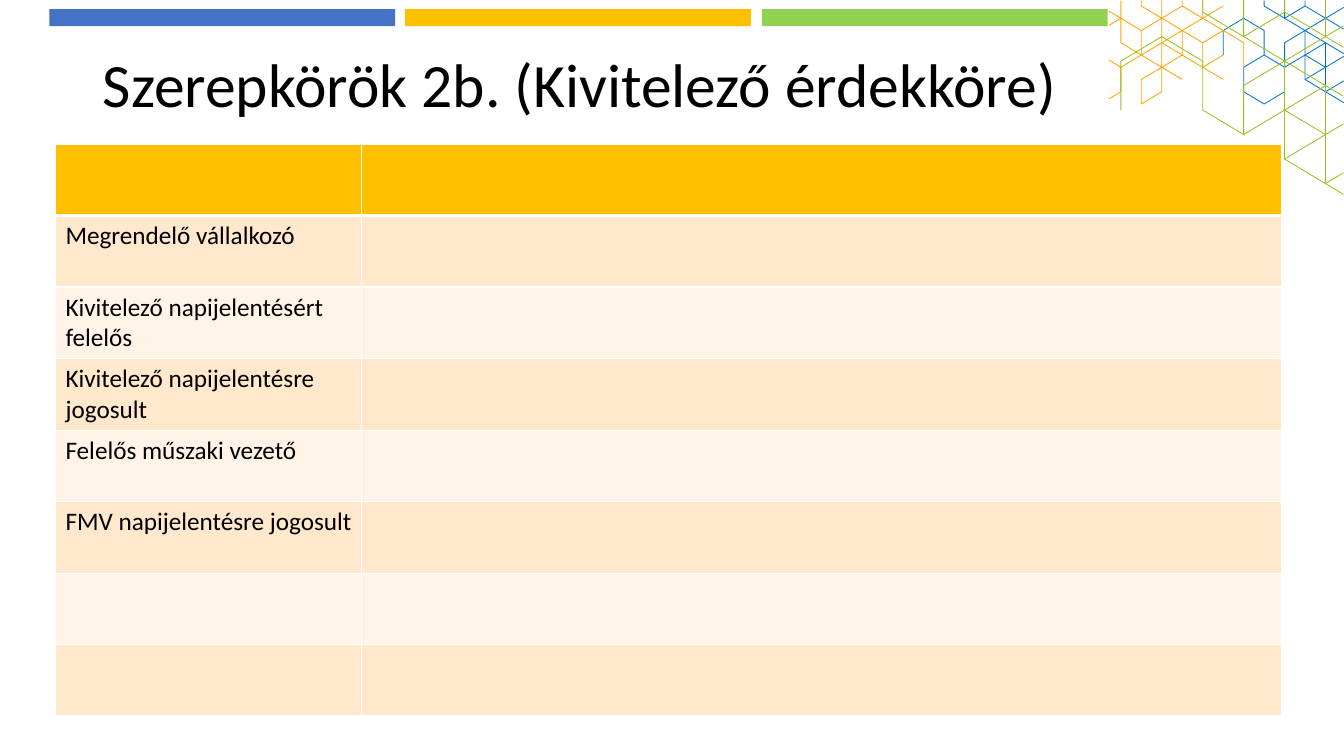
from dataclasses import dataclass

from lxml.etree import SubElement
from pptx import Presentation
from pptx.dml.color import RGBColor
from pptx.enum.shapes import MSO_SHAPE
from pptx.enum.text import MSO_ANCHOR, PP_ALIGN
from pptx.oxml.ns import qn
from pptx.slide import Slide
from pptx.table import _Cell
from pptx.text.text import TextFrame
from pptx.util import Inches, Pt

COLOURS = {
    "blue": "4472C4",
    "amber": "FFC000",
    "green": "92D050",
    "lattice blue": "0072CE",
    "lattice orange": "FFA300",
    "lattice green": "96C11E",
    "dark band": "FFE8CC",
    "light band": "FFF4E7",
    "white": "FFFFFF",
    "black": "000000",
}
ROLES = [
    "",
    "Megrendelő vállalkozó",
    "Kivitelező napijelentésért felelős",
    "Kivitelező napijelentésre jogosult",
    "Felelős műszaki vezető",
    "FMV napijelentésre jogosult",
    "",
    "",
]


@dataclass
class Bar:
    """A coloured bar along the top edge."""

    left: float
    colour: str


@dataclass
class Lattice:
    """A hexagon line pattern: each path lists column,row nodes of its grid."""

    colour: str
    top: float
    column_step: float
    row_step: float
    paths: list[str]


BARS = [Bar(0.49, "blue"), Bar(4.02, "amber"), Bar(7.56, "green")]
LATTICE_LEFT = 11.12
LATTICES = [
    Lattice("lattice blue", 0.06, 0.203, 0.1215, [
        "10.89,7.89 9,6 9,4 8,5 7,4 6,5 6,7 7,8 8,7",
        "7,4 7,2 6,1 5,2 5,4",
        "8,5 8,3 9,2 7,0 7,-0.45",
        "8,-0.45 8,1 9,0 9,-0.45",
        "9,0 10,1 10,-0.45",
        "10.89,0.11 9,2 10.89,3.89",
        "10,1 10.89,1.89",
        "9,2 9,4 10,3 10,7 10.89,6.11",
        "9,4 10,5 10.89,4.11",
        "9,6 10,5",
    ]),
    Lattice("lattice orange", 0.06, 0.203, 0.1215, [
        "3,-0.45 3,0 5,2 4,3 2,1 3,0",
        "4,-0.45 4,1 2,3 4,5 4,3",
        "4,1 5,0",
        "3,2 3,4 1,6 1,8 2,7 2,5 3,6",
        "2,-0.45 2,5 1,4 1,2 2,1 1,0 1,-0.45",
        "5,2 6,3 6,5",
        "5,4 4,5 5,6",
        "2,3 0,5 0,7 -0.59,7.59",
        "0,5 -0.59,4.41",
        "1,4 0,3 0,-0.45",
        "1,2 -0.59,0.41",
        "0,1 -0.59,1.59",
    ]),
    Lattice("lattice green", 0.12, 0.406, 0.243, [
        "2,-0.49 2,0 5.44,3.44",
        "3,-0.49 3,1 4,0 4,-0.49",
        "4,0 5.44,1.44",
        "5,-0.49 5,1 3,3 3,5 5,3 5,7 5.44,6.56",
        "5.44,0.56 5,1",
        "4,2 4,6 5.44,4.56",
        "4,4 5,5",
        "4,6 5.44,7.44",
        "3,5 2,4 2,2 1,1 0,2 0,4",
    ]),
]


def colour_of(name: str) -> RGBColor:
    """Return the named colour."""
    return RGBColor.from_string(COLOURS[name])


def write_text(frame: TextFrame, text: str, *, size: float, spacing: float = 1.0) -> None:
    """Put one left-aligned black paragraph in a text frame."""
    para = frame.paragraphs[0]
    para.alignment = PP_ALIGN.LEFT
    para.line_spacing = spacing
    span = para.add_run()
    span.text = text
    span.font.name = "Calibri"
    span.font.size = Pt(size)
    span.font.color.rgb = colour_of("black")


def draw_bar(page: Slide, bar: Bar) -> None:
    """Draw one top bar."""
    box = page.shapes.add_shape(
        MSO_SHAPE.RECTANGLE, Inches(bar.left), Inches(0.09), Inches(3.43), Inches(0.17)
    )
    box.shadow.inherit = False
    box.fill.solid()
    box.fill.fore_color.rgb = colour_of(bar.colour)
    box.line.fill.background()


def draw_lattice(page: Slide, lattice: Lattice) -> None:
    """Draw all paths of a lattice as one outline shape."""
    routes = []
    for path in lattice.paths:
        nodes = [node.split(",") for node in path.split()]
        routes.append([
            (
                Inches(LATTICE_LEFT + float(column) * lattice.column_step),
                Inches(max(0, lattice.top + float(row) * lattice.row_step)),
            )
            for column, row in nodes
        ])
    builder = page.shapes.build_freeform(*routes[0][0])
    for index, (start, *others) in enumerate(routes):
        if index:
            builder.move_to(*start)
        builder.add_line_segments(others, close=False)
    outline = builder.convert_to_shape()
    outline.shadow.inherit = False
    outline.fill.background()
    outline.line.color.rgb = colour_of(lattice.colour)
    outline.line.width = Pt(0.6)


def format_cell(cell: _Cell, fill: str, top: float, bottom: float) -> None:
    """Give a cell white borders and a fill."""
    properties = cell._tc.get_or_add_tcPr()
    for side, width in (("L", 1), ("R", 1), ("T", top), ("B", bottom)):
        border = SubElement(properties, qn(f"a:ln{side}"), w=str(Pt(width)))
        paint = SubElement(border, qn("a:solidFill"))
        SubElement(paint, qn("a:srgbClr"), val=COLOURS["white"])
    cell.fill.solid()
    cell.fill.fore_color.rgb = colour_of(fill)


def draw_roles(page: Slide) -> None:
    """Draw the table of roles."""
    table = page.shapes.add_table(
        len(ROLES), 2, Inches(0.55), Inches(1.43), Inches(12.16), Inches(5.67)
    ).table
    for column, width in zip(table.columns, (3.04, 9.12)):
        column.width = Inches(width)
    for row, role in enumerate(ROLES):
        band = "dark band" if row % 2 else "light band"
        for cell in table.rows[row].cells:
            format_cell(
                cell,
                band if row else "amber",
                top=3 if row == 1 else 1,
                bottom=1 if row else 3,
            )
        if role:
            write_text(table.cell(row, 0).text_frame, role, size=18)


def main() -> None:
    """Build the slide and save it."""
    deck = Presentation()
    deck.slide_width, deck.slide_height = Inches(13.333), Inches(7.5)
    page = deck.slides.add_slide(deck.slide_layouts[5])
    for lattice in LATTICES:
        draw_lattice(page, lattice)
    for bar in BARS:
        draw_bar(page, bar)
    title = page.shapes.title
    title.left, title.top = Inches(0.92), Inches(0.4)
    title.width, title.height = Inches(11.5), Inches(0.94)
    title.text_frame.vertical_anchor = MSO_ANCHOR.MIDDLE
    write_text(
        title.text_frame, "Szerepkörök 2b. (Kivitelező érdekköre)", size=44, spacing=0.9
    )
    draw_roles(page)
    deck.save("out.pptx")


if __name__ == "__main__":
    main()
